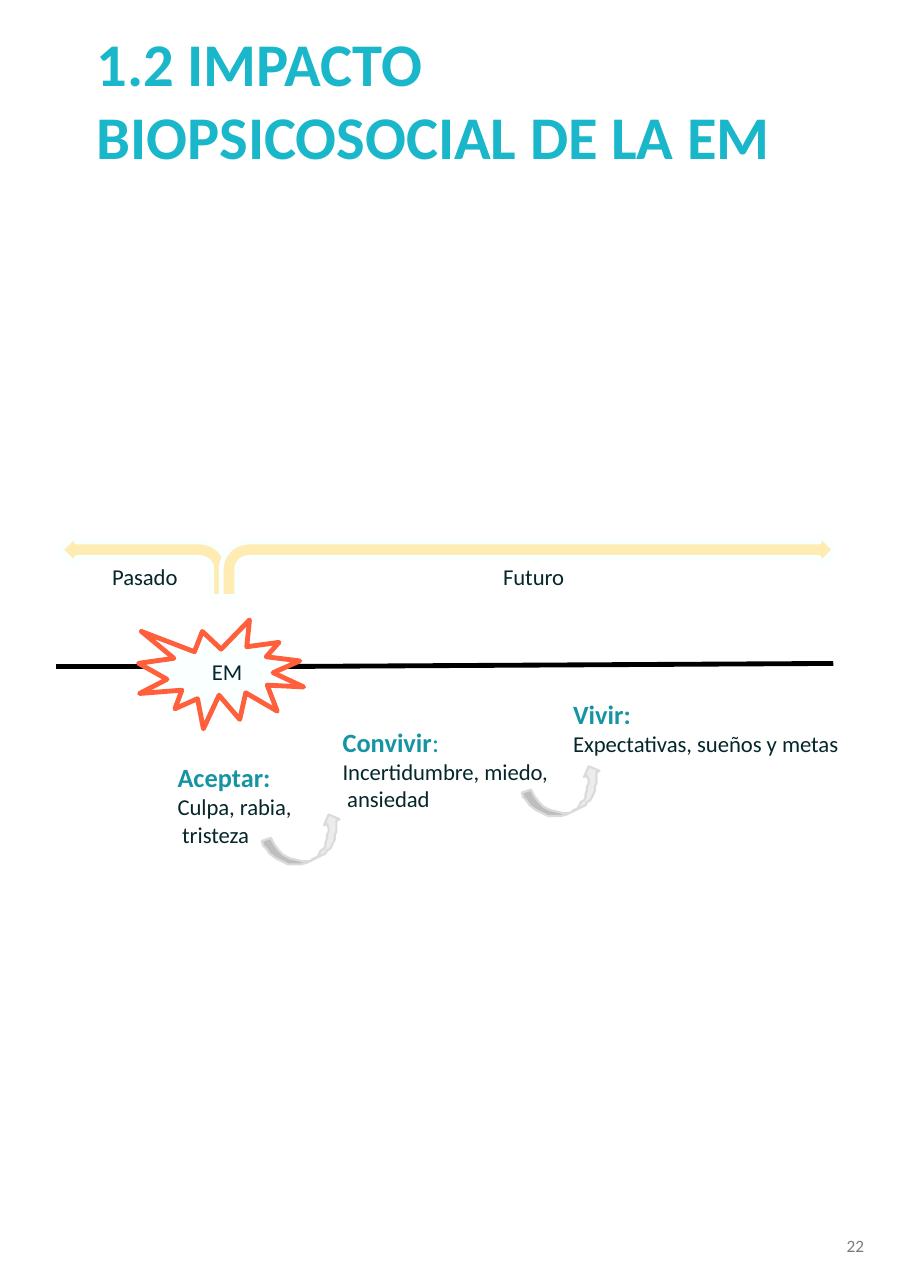
from lxml.etree import SubElement
from pptx import Presentation
from pptx.dml.color import RGBColor
from pptx.enum.shapes import MSO_CONNECTOR, MSO_SHAPE
from pptx.enum.text import MSO_ANCHOR, PP_ALIGN
from pptx.oxml.ns import qn
from pptx.util import Inches, Pt

WIDTH, HEIGHT = Inches(5.83), Inches(8.27)
FONT = "Calibri"
COLORS = {
    "title": "1AB6C9", "stage": "1595A4", "ink": "05262A", "number": "797C7D",
    "axis": "000000", "pale": "FAFFFF", "burst": "FF5F3A", "period": "FFECB3",
    "arrow_head": "ECECEC", "arrow_tail": "BEBEBE", "arrow_edge": "DBDBDB",
}

# Curved arrow in hundredths of an inch: both parts follow the outline.
ARROW_HEAD = [
    (32, 29), (34, 28), (36, 27), (37, 25), (38, 23), (40, 22), (41, 20),
    (41, 18), (42, 15), (42, 13), (43, 11), (43, 9), (42, 6), (40, 7),
    (43, 0), (50, 3), (48, 4), (48, 11), (47, 13), (47, 16), (46, 18),
    (45, 20), (44, 22), (42, 23), (41, 25), (39, 26), (37, 27), (35, 28),
]
ARROW_TAIL = [
    (35, 28), (29, 31), (25, 32), (21, 32), (17, 32), (13, 30), (9, 28),
    (5, 25), (3, 22), (1, 20), (0, 17), (6, 15), (8, 19), (11, 23),
    (14, 26), (18, 28), (22, 29), (26, 30), (31, 30), (35, 28),
]

# Name, bold colon, feelings, and box in percent of the slide.
STAGES = [
    ("Convivir", False, "Incertidumbre, miedo, ansiedad", (37.56, 56.35, 23.67, 6.89)),
    ("Aceptar", True, "Culpa, rabia, tristeza", (19.38, 59.13, 13.38, 6.89)),
    ("Vivir", True, "Expectativas, sueños y metas", (62.95, 54.17, 30.53, 4.72)),
]


def color(name):
    return RGBColor.from_string(COLORS[name])


def place(*shares):
    """Turn alternating x and y percentages into slide lengths."""
    return [int((WIDTH, HEIGHT)[i % 2] * share / 100) for i, share in enumerate(shares)]


def paint(shape, fill=None, edge=None, weight=2.25):
    shape.shadow.inherit = False
    if fill:
        shape.fill.solid()
        shape.fill.fore_color.rgb = color(fill)
    else:
        shape.fill.background()
    if edge:
        shape.line.color.rgb = color(edge)
        shape.line.width = Pt(weight)
    else:
        shape.line.fill.background()


def style_run(run, size, tone, bold=False):
    run.font.name = FONT
    run.font.size = Pt(size)
    run.font.bold = bold
    run.font.color.rgb = color(tone)


def add_frame(slide, box, wrap=True):
    frame = slide.shapes.add_textbox(*place(*box)).text_frame
    frame.word_wrap = wrap
    frame.margin_left = Inches(0.01)
    frame.margin_top = frame.margin_right = frame.margin_bottom = 0
    return frame


def add_label(slide, text, box, size=10.5, tone="ink", bold=False, wrap=False):
    frame = add_frame(slide, box, wrap)
    frame.vertical_anchor = MSO_ANCHOR.MIDDLE
    frame.text = text
    style_run(frame.paragraphs[0].runs[0], size, tone, bold)
    return frame.paragraphs[0]


def add_stage(slide, name, bold_colon, feelings, box):
    frame = add_frame(slide, box)
    heading = frame.paragraphs[0]
    for text, bold in ((name, True), (":", bold_colon)):
        run = heading.add_run()
        run.text = text
        style_run(run, 12.2, "stage", bold)
    detail = frame.add_paragraph()
    detail.text = feelings
    style_run(detail.runs[0], 10.5, "ink")
    hanging = Inches(0.03)
    properties = detail._p.get_or_add_pPr()
    properties.set("marL", str(hanging))
    properties.set("indent", str(-hanging))


def add_axis(slide, *ends):
    axis = slide.shapes.add_connector(MSO_CONNECTOR.STRAIGHT, *place(*ends))
    axis.line.color.rgb = color("axis")
    axis.line.width = Pt(2.25)
    SubElement(axis._element.spPr, qn("a:effectLst"))


def add_period(slide, box, backwards=False):
    """Draw a bent arrow that leaves the diagnosis towards one side."""
    period = slide.shapes.add_shape(MSO_SHAPE.BENT_ARROW, *place(*box))
    paint(period, "period", "pale")
    if backwards:
        period._element.spPr.find(qn("a:xfrm")).set("flipH", "1")


def add_curved_arrow(slide, left, top):
    parts = [
        (ARROW_HEAD, True, "arrow_head", None),
        (ARROW_TAIL, True, "arrow_tail", None),
        (ARROW_HEAD + ARROW_TAIL, False, None, "arrow_edge"),
    ]
    for points, closed, fill, edge in parts:
        outline = slide.shapes.build_freeform(*points[0], scale=Inches(0.01))
        outline.add_line_segments(points[1:], close=closed)
        paint(outline.convert_to_shape(*place(left, top)), fill, edge, 1)


def main():
    deck = Presentation()
    deck.slide_width, deck.slide_height = WIDTH, HEIGHT
    slide = deck.slides.add_slide(deck.slide_layouts[6])

    add_axis(slide, 6.17, 51.75, 16.12, 51.75)
    add_axis(slide, 31.22, 51.75, 91.77, 51.51)
    diagnosis = slide.shapes.add_shape(
        MSO_SHAPE.EXPLOSION1, *place(15.27, 48.13, 18.18, 8.46))
    paint(diagnosis, "pale", "burst")

    add_period(slide, (6.69, 41.48, 18.35, 4.84), backwards=True)
    add_period(slide, (24.36, 41.48, 67.58, 4.84))
    add_label(slide, "Pasado", (12.18, 43.6, 7.38, 2.3))
    add_label(slide, "Futuro", (55.23, 43.6, 7.03, 2.3))
    add_label(slide, "EM", (23.16, 50.95, 3.6, 2.3))

    for stage in STAGES:
        add_stage(slide, *stage)
    add_curved_arrow(slide, 28.82, 63.24)
    add_curved_arrow(slide, 57.46, 59.49)

    add_label(slide, "1.2 IMPACTO BIOPSICOSOCIAL DE LA EM",
              (10.46, 1.93, 79.07, 11.49), 28, "title", bold=True, wrap=True)
    number = add_label(slide, "22", (74.44, 94.07, 20.75, 5.32), 8, "number", wrap=True)
    number.alignment = PP_ALIGN.RIGHT
    deck.save("out.pptx")


if __name__ == "__main__":
    main()
